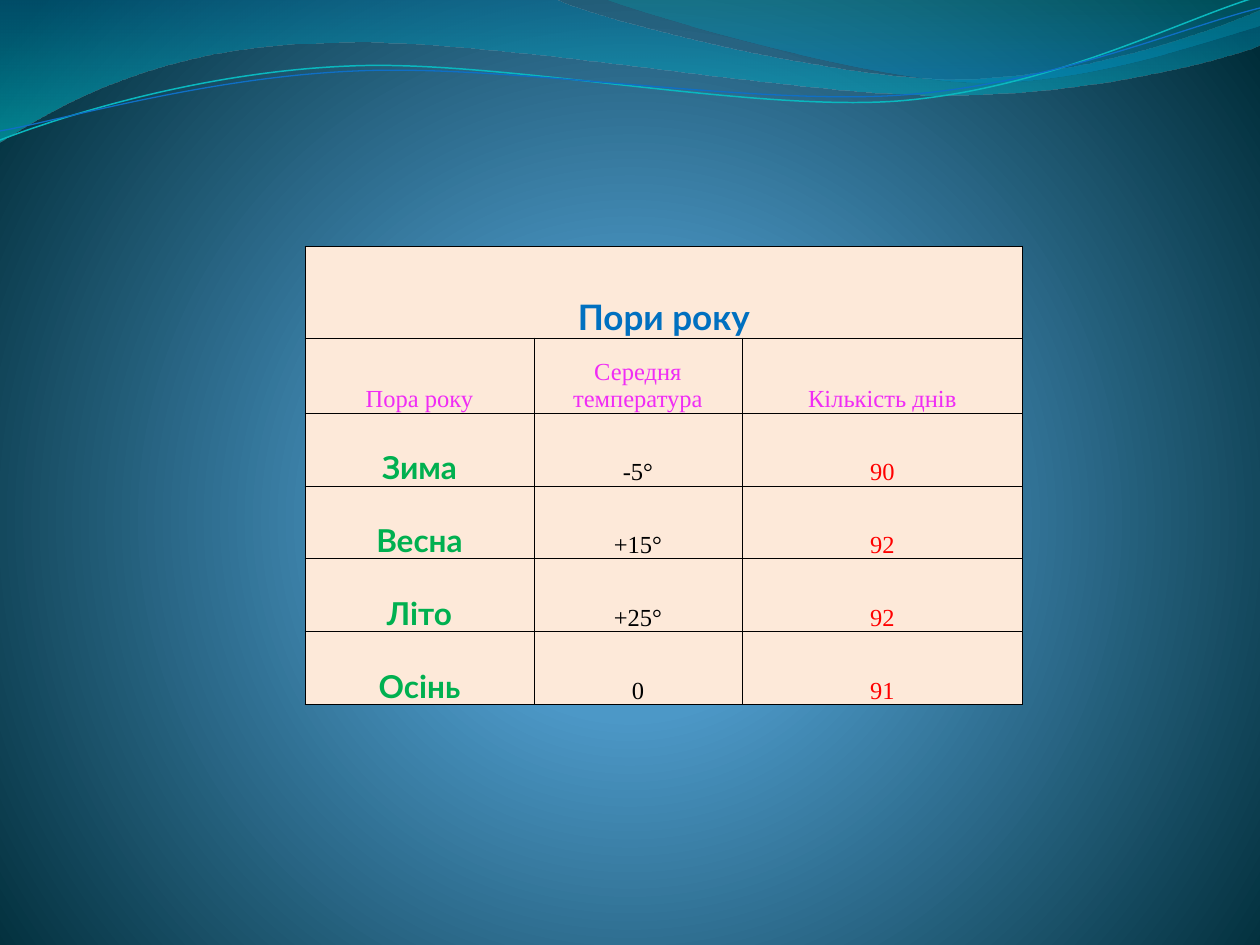
from lxml import etree
from pptx import Presentation
from pptx.dml.color import RGBColor as RGB
from pptx.enum.text import MSO_ANCHOR as ANCHOR, PP_ALIGN as ALIGN
from pptx.oxml import parse_xml
from pptx.oxml.ns import nsdecls, qn
from pptx.util import Pt

PX = 914400 // 126
HEX = {
    "cell": "FDE9D9", "edge": "000000", "title": "0070C0", "head": "F02CF5",
    "name": "00B050", "temp": "000000", "days": "FF0000",
    "teal": "0AB8BF", "blue": "0F6FC6",
}


def grad(box, stops, shade):
    """Swap the solid fill in box for a gradient of (place, colour, alpha)."""
    marks = "".join(
        f'<a:gs pos="{at * 1000}"><a:srgbClr val="{tone}">'
        f'<a:alpha val="{alpha * 1000}"/></a:srgbClr></a:gs>'
        for at, tone, alpha in stops)
    fill = parse_xml(f'<a:gradFill {nsdecls("a")} rotWithShape="1">'
                     f'<a:gsLst>{marks}</a:gsLst>{shade}</a:gradFill>')
    box.replace(box.find(qn("a:solidFill")), fill)


def curve(start, parts, closed):
    """Draw a path in px; a part of one point is a line, of three a Bezier."""
    pen = slide.shapes.build_freeform(*start, scale=PX)
    pen.add_line_segments([dot for part in parts for dot in part], close=closed)
    shape = pen.convert_to_shape()
    shape.shadow.inherit = False
    lines = iter(list(shape.element.iter(qn("a:lnTo"))))
    for part in parts:
        first = next(lines)
        if len(part) == 3:
            bend = etree.Element(qn("a:cubicBezTo"))
            first.addprevious(bend)
            for line in (first, next(lines), next(lines)):
                bend.append(line[0])
                line.getparent().remove(line)
    return shape


deck = Presentation()
deck.slide_width, deck.slide_height = 1260 * PX, 945 * PX
slide = deck.slides.add_slide(deck.slide_layouts[6])

# Background glow
slide.background.fill.solid()
grad(slide.element.find(".//" + qn("p:bgPr")),
     [(0, "4AA0D6", 100), (25, "4C98C7", 100), (100, "002C38", 100)],
     '<a:path path="circle"><a:fillToRect l="10000" t="110000" '
     'r="10000" b="100000"/></a:path>')

# Filled waves along the top
waves = [
    ((0, 0), [
        [(554, -1)],
        [(600, 21), (837, 79), (955, 79)],
        [(1075, 79), (1207, 33), (1260, 11)],
        [(1261, 45)],
        [(1239, 55), (1096, 96), (940, 95)],
        [(784, 95), (481, 35), (324, 43)],
        [(163, 45), (58, 105), (-1, 142)],
    ], [(0, "0074A1", 45), (100, "00C6CF", 55)]),
    ((604, -1), [
        [(641, 14), (859, 78), (969, 82)],
        [(1079, 87), (1211, 40), (1260, 26)],
        [(1260, 0)],
    ], [(0, "00A1A9", 30), (80, "008BBF", 45)]),
]
for start, parts, stops in waves:
    wave = curve(start, parts, True)
    wave.fill.solid()
    wave.line.fill.background()
    grad(wave.element.spPr, stops, '<a:lin ang="5400000" scaled="1"/>')

# Thin wave lines
trails = [
    ((0, 140), [
        [(60, 117), (199, 72), (349, 66)],
        [(498, 59), (747, 112), (898, 101)],
        [(1050, 89), (1182, 19), (1257, -3)],
    ], "teal", 0.85),
    ((0, 131), [
        [(59, 121), (207, 77), (357, 71)],
        [(508, 64), (752, 106), (903, 95)],
        [(1053, 84), (1186, 26), (1260, 8)],
    ], "blue", 0.75),
]
for start, parts, tone, width in trails:
    trail = curve(start, parts, False)
    trail.fill.background()
    trail.line.color.rgb = RGB.from_string(HEX[tone])
    trail.line.width = Pt(width)

# Table of the seasons
rows = [
    ("Пори року", "", ""),
    ("Пора року", "Середня температура", "Кількість днів"),
    ("Зима", "-5°", "90"),
    ("Весна", "+15°", "92"),
    ("Літо", "+25°", "92"),
    ("Осінь", "0", "91"),
]
wide = [229, 208, 281]
high = [92, 75] + [73] * 4
grid = slide.shapes.add_table(
    len(rows), len(wide), 305 * PX, 246 * PX, sum(wide) * PX, sum(high) * PX).table
for col, size in zip(grid.columns, wide):
    col.width = size * PX
for row, size in zip(grid.rows, high):
    row.height = size * PX
grid.cell(0, 0).merge(grid.cell(0, 2))

# Text styles: font, size, bold
big, mid, plain = ("Lato", 20, True), ("Lato", 18, True), ("Times New Roman", 14, False)
looks = [[("title", big)] * 3, [("head", plain)] * 3]
looks += [[("name", mid), ("temp", plain), ("days", plain)]] * 4

for r, row in enumerate(rows):
    for c, text in enumerate(row):
        cell = grid.cell(r, c)
        cell.fill.solid()
        cell.fill.fore_color.rgb = RGB.from_string(HEX["cell"])
        cell.vertical_anchor = ANCHOR.BOTTOM
        cell.margin_left = cell.margin_right = cell.margin_top = PX
        cell.margin_bottom = 0

        # Cell borders come before the fill
        props = cell._tc.get_or_add_tcPr()
        for i, side in enumerate("LRTB"):
            props.insert(i, parse_xml(
                f'<a:ln{side} {nsdecls("a")} w="{Pt(0.5)}"><a:solidFill>'
                f'<a:srgbClr val="{HEX["edge"]}"/></a:solidFill></a:ln{side}>'))

        if not text:
            continue
        tone, (face, size, bold) = looks[r][c]
        cell.text_frame.text = text
        para = cell.text_frame.paragraphs[0]
        para.alignment = ALIGN.CENTER
        font = para.runs[0].font
        font.name, font.size, font.bold = face, Pt(size), bold
        font.color.rgb = RGB.from_string(HEX[tone])

deck.save("out.pptx")
